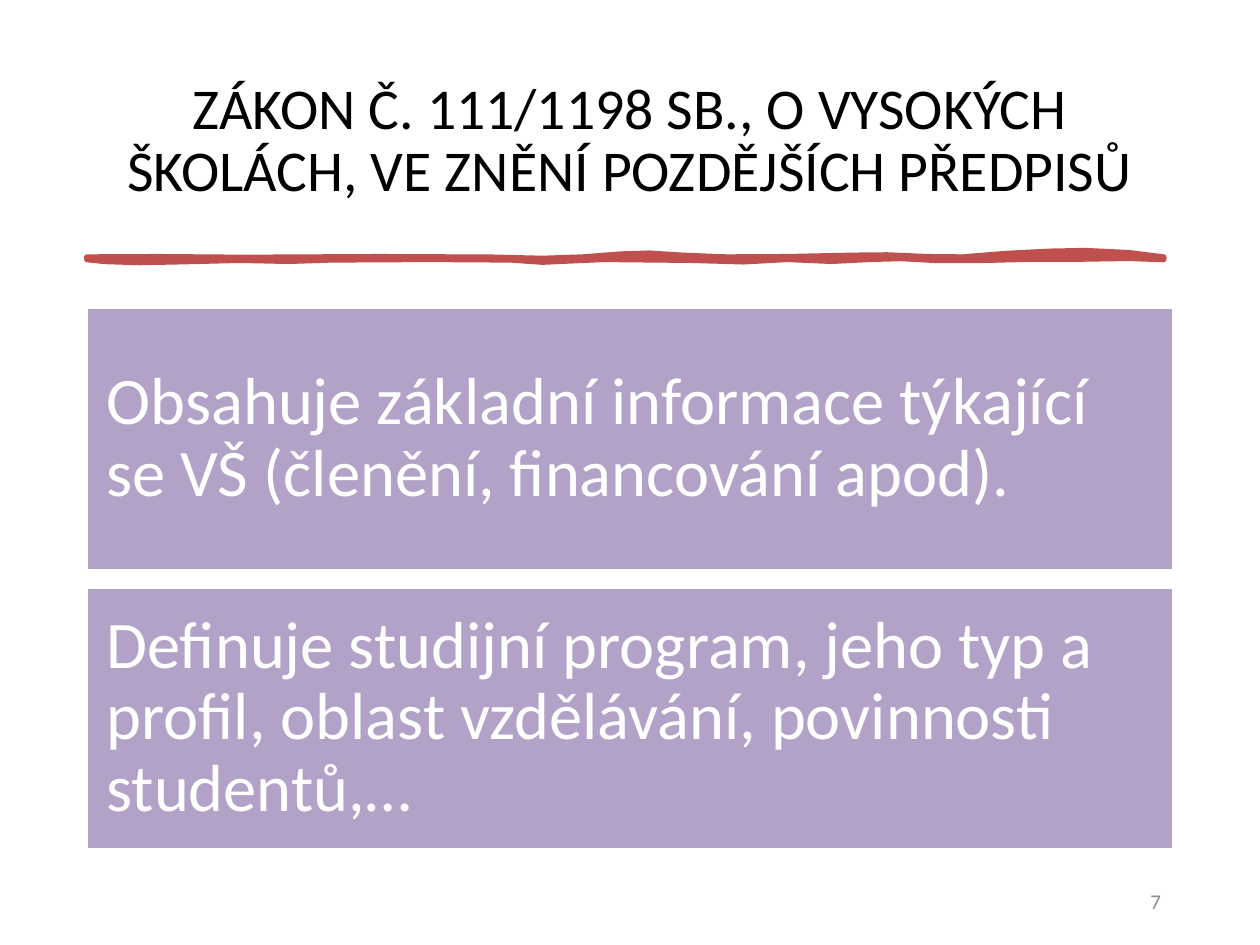
from pptx import Presentation
from pptx.dml.color import RGBColor
from pptx.enum.shapes import MSO_SHAPE
from pptx.enum.text import MSO_ANCHOR, MSO_AUTO_SIZE, PP_ALIGN
from pptx.util import Pt

RECT = MSO_SHAPE.RECTANGLE
MIDDLE = MSO_ANCHOR.MIDDLE
NO_FIT = MSO_AUTO_SIZE.NONE
LEFT, CENTER, RIGHT = PP_ALIGN.LEFT, PP_ALIGN.CENTER, PP_ALIGN.RIGHT

TITLE = "ZÁKON Č. 111/1198 SB., O VYSOKÝCH ŠKOLÁCH, VE ZNĚNÍ POZDĚJŠÍCH PŘEDPISŮ"
CARDS = [
    "Obsahuje základní informace týkající se VŠ (členění, financování apod).",
    "Definuje studijní program, jeho typ a profil, oblast vzdělávání, povinnosti studentů,…",
]
MARGIN, WIDTH = 49.5, 621
CARD_TOP, CARD_HEIGHT, CARD_GAP = 175.8, 150.2, 9.4
STROKE_TOP = [
    (49.7, 147), (90, 146.8), (139, 147.2), (217, 146.8), (281, 147.1),
    (310, 147.8), (333, 147), (355, 145.3), (371, 144.8), (390, 146),
    (415, 147), (450, 146.8), (487, 146), (507, 145.8), (530, 146.8),
    (550, 147), (575, 145), (600, 143.7), (620, 143.3), (645, 144.5), (665, 147),
]
STROKE_BOTTOM = [
    (665, 148.3), (645, 147.6), (620, 148), (587, 148.1), (560, 148.8),
    (535, 148.8), (515, 147.7), (497, 148.2), (475, 149.3), (450, 148.2),
    (425, 149.6), (395, 148.7), (345, 148.2), (310, 149.8), (292, 148.5),
    (246, 148.2), (189, 148.5), (165, 149.3), (137, 148.7), (105, 149.5),
    (80, 150), (60, 149.4), (49.7, 148.3),
]


def color(value):
    return RGBColor.from_string(value)


def set_text(s, text, size, value, align, spacing=None):
    tf = s.text_frame
    tf.text = text
    tf.word_wrap = True
    tf.auto_size = NO_FIT
    tf.vertical_anchor = MIDDLE
    p = tf.paragraphs[0]
    p.alignment = align
    p.line_spacing = spacing
    font = p.runs[0].font
    font.name = "Calibri"
    font.size = Pt(size)
    font.color.rgb = color(value)


def paint(sp, fill, line, width):
    sp.shadow.inherit = False
    sp.fill.solid()
    sp.fill.fore_color.rgb = color(fill)
    sp.line.color.rgb = color(line)
    sp.line.width = Pt(width)


def add_title(s):
    title = s.shapes.title
    title.left, title.top = Pt(MARGIN), Pt(28.8)
    title.width, title.height = Pt(WIDTH), Pt(104.4)
    set_text(title, TITLE, 33, "000000", CENTER, 0.9)


def add_brush_stroke(s):
    start, *rest = [(Pt(x), Pt(y)) for x, y in STROKE_TOP + STROKE_BOTTOM]
    builder = s.shapes.build_freeform(*start)
    builder.add_line_segments(rest, close=True)
    paint(builder.convert_to_shape(), "C0504D", "C0504D", 3.25)


def add_card(s, top, text):
    sp = s.shapes.add_shape(RECT, Pt(MARGIN), Pt(top), Pt(WIDTH), Pt(CARD_HEIGHT))
    paint(sp, "B3A2C7", "FFFFFF", 2)
    tf = sp.text_frame
    tf.margin_left = tf.margin_right = tf.margin_top = tf.margin_bottom = Pt(11.4)
    set_text(sp, text, 38, "FFFFFF", LEFT, 0.9)


def add_slide_number(s):
    box = s.shapes.add_textbox(Pt(508.5), Pt(500.5), Pt(162), Pt(28.8))
    set_text(box, "7", 12, "8C8C8C", RIGHT)


def main():
    prs = Presentation()
    prs.slide_width, prs.slide_height = Pt(720), Pt(540)
    s = prs.slides.add_slide(prs.slide_layouts[5])
    add_title(s)
    add_brush_stroke(s)
    add_slide_number(s)
    for i, text in enumerate(CARDS):
        add_card(s, CARD_TOP + i * (CARD_HEIGHT + CARD_GAP), text)
    prs.save("out.pptx")


if __name__ == "__main__":
    main()
